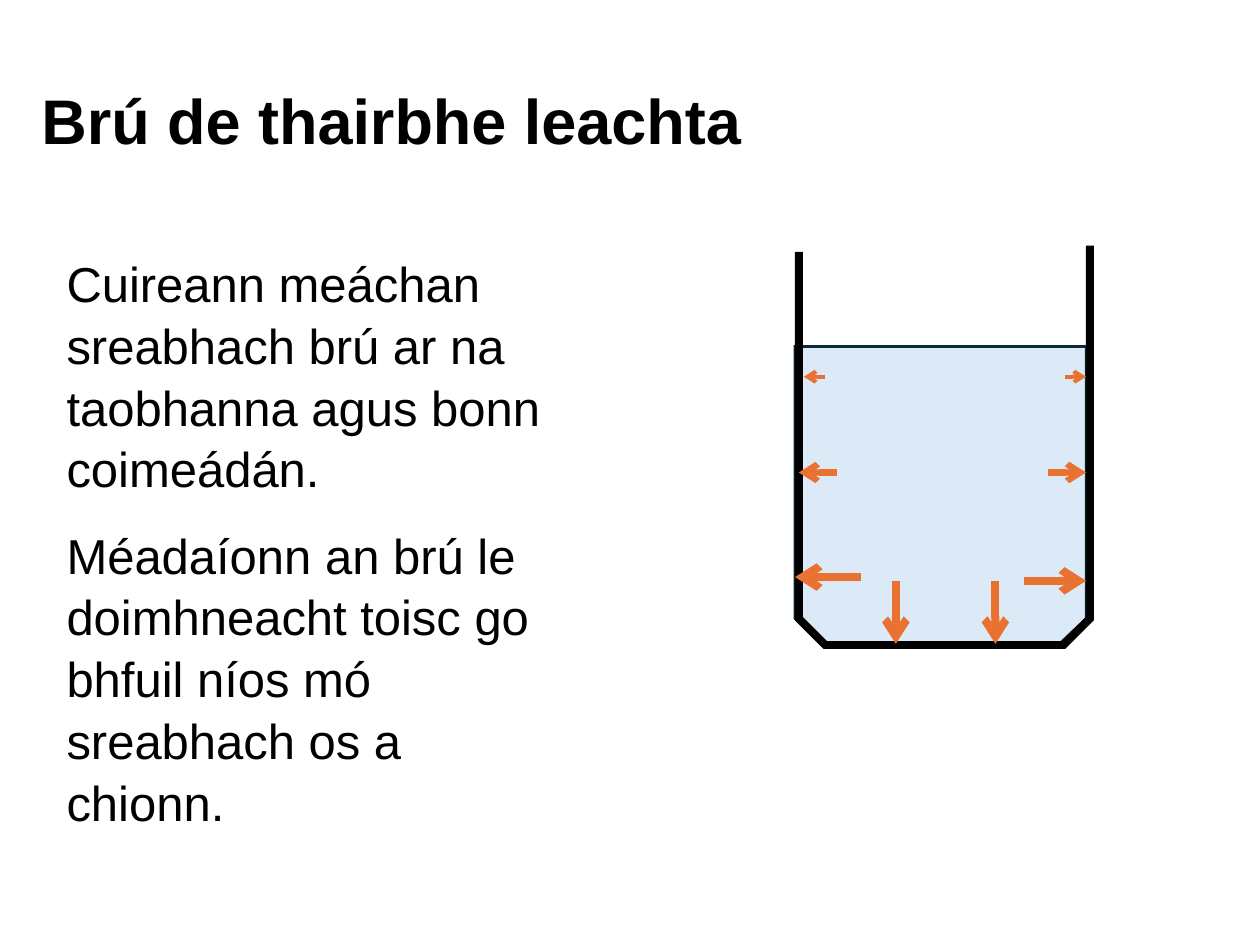
from typing import NamedTuple

from lxml import etree
from pptx import Presentation
from pptx.dml.color import RGBColor
from pptx.enum.shapes import MSO_CONNECTOR
from pptx.enum.text import MSO_ANCHOR, PP_ALIGN
from pptx.oxml.ns import qn
from pptx.util import Inches, Pt

COLORS = {"text": "000000", "liquid": "DCEAF7", "surface": "092A39",
          "wall": "000000", "force": "E97132"}
FONT = "Arial"

Point = tuple[float, float]


class TextBlock(NamedTuple):
    box: tuple[float, float, float, float]
    lines: list[str]
    size: float
    bold: bool
    spacing: float
    anchor: MSO_ANCHOR


class Outline(NamedTuple):
    points: list[Point]
    closed: bool
    fill: str | None
    line: str
    width: float


class Force(NamedTuple):
    start: Point
    end: Point
    width: float


TEXTS = [
    TextBlock((0.43, 1.94, 4.1, 4.58),
              ["Cuireann meáchan sreabhach brú ar na taobhanna agus bonn coimeádán.",
               "Méadaíonn an brú le doimhneacht toisc go bhfuil níos mó sreabhach os a chionn."],
              28, False, 1.05, MSO_ANCHOR.TOP),
    TextBlock((0.23, 0.66, 9.54, 0.65), ["Brú de thairbhe leachta"],
              36, True, 0.9, MSO_ANCHOR.MIDDLE),
]

OUTLINES = [
    Outline([(6.31, 2.75), (8.62, 2.75), (8.62, 4.91), (8.41, 5.11),
             (6.51, 5.11), (6.31, 4.91)], True, "liquid", "surface", 1.5),
    Outline([(6.34, 2), (6.34, 4.91), (6.55, 5.12), (8.44, 5.12),
             (8.65, 4.91), (8.65, 1.95)], False, None, "wall", 4.5),
]

FORCES = [
    Force((8.13, 4.61), (8.62, 4.61), 4.5),
    Force((6.83, 4.58), (6.31, 4.58), 4.5),
    Force((6.64, 3.75), (6.34, 3.75), 3.5),
    Force((8.32, 3.75), (8.62, 3.75), 3.5),
    *(Force((x, 4.61), (x, 5.11), 4.5) for x in (7.11, 7.9)),
    Force((8.45, 2.99), (8.62, 2.99), 2.25),
    Force((6.55, 2.99), (6.38, 2.99), 2.25),
]


def rgb(name: str) -> RGBColor:
    return RGBColor.from_string(COLORS[name])


def add_text(shapes, block: TextBlock) -> None:
    tf = shapes.add_textbox(*map(Inches, block.box)).text_frame
    tf.word_wrap = True
    tf.vertical_anchor = block.anchor
    tf.text = "\n".join(block.lines)
    for p in tf.paragraphs:
        p.alignment = PP_ALIGN.LEFT
        p.line_spacing = block.spacing
        p.space_before = Pt(block.size / 2)
        for r in p.runs:
            r.font.name = FONT
            r.font.size = Pt(block.size)
            r.font.bold = block.bold
            r.font.color.rgb = rgb("text")


def add_outline(shapes, outline: Outline) -> None:
    start, *rest = [(Inches(x), Inches(y)) for x, y in outline.points]
    builder = shapes.build_freeform(*start)
    builder.add_line_segments(rest, close=outline.closed)
    sp = builder.convert_to_shape()
    sp.shadow.inherit = False
    if outline.fill:
        sp.fill.solid()
        sp.fill.fore_color.rgb = rgb(outline.fill)
    else:
        sp.fill.background()
    sp.line.color.rgb = rgb(outline.line)
    sp.line.width = Pt(outline.width)
    etree.SubElement(sp.line._get_or_add_ln(), qn("a:miter"), lim="800000")


def add_force(shapes, force: Force) -> None:
    cxn = shapes.add_connector(MSO_CONNECTOR.STRAIGHT,
                               *map(Inches, force.start + force.end))
    cxn.line.color.rgb = rgb("force")
    cxn.line.width = Pt(force.width)
    ln = cxn.line._get_or_add_ln()
    etree.SubElement(ln, qn("a:miter"), lim="800000")
    etree.SubElement(ln, qn("a:tailEnd"), type="arrow")
    etree.SubElement(cxn._element.spPr, qn("a:effectLst"))


def main() -> None:
    prs = Presentation()
    prs.slide_width, prs.slide_height = Inches(10), Inches(7.5)
    shapes = prs.slides.add_slide(prs.slide_layouts[6]).shapes
    body, title = TEXTS
    add_text(shapes, body)
    for outline in OUTLINES:
        add_outline(shapes, outline)
    for force in FORCES:
        add_force(shapes, force)
    add_text(shapes, title)
    prs.save("out.pptx")


if __name__ == "__main__":
    main()
